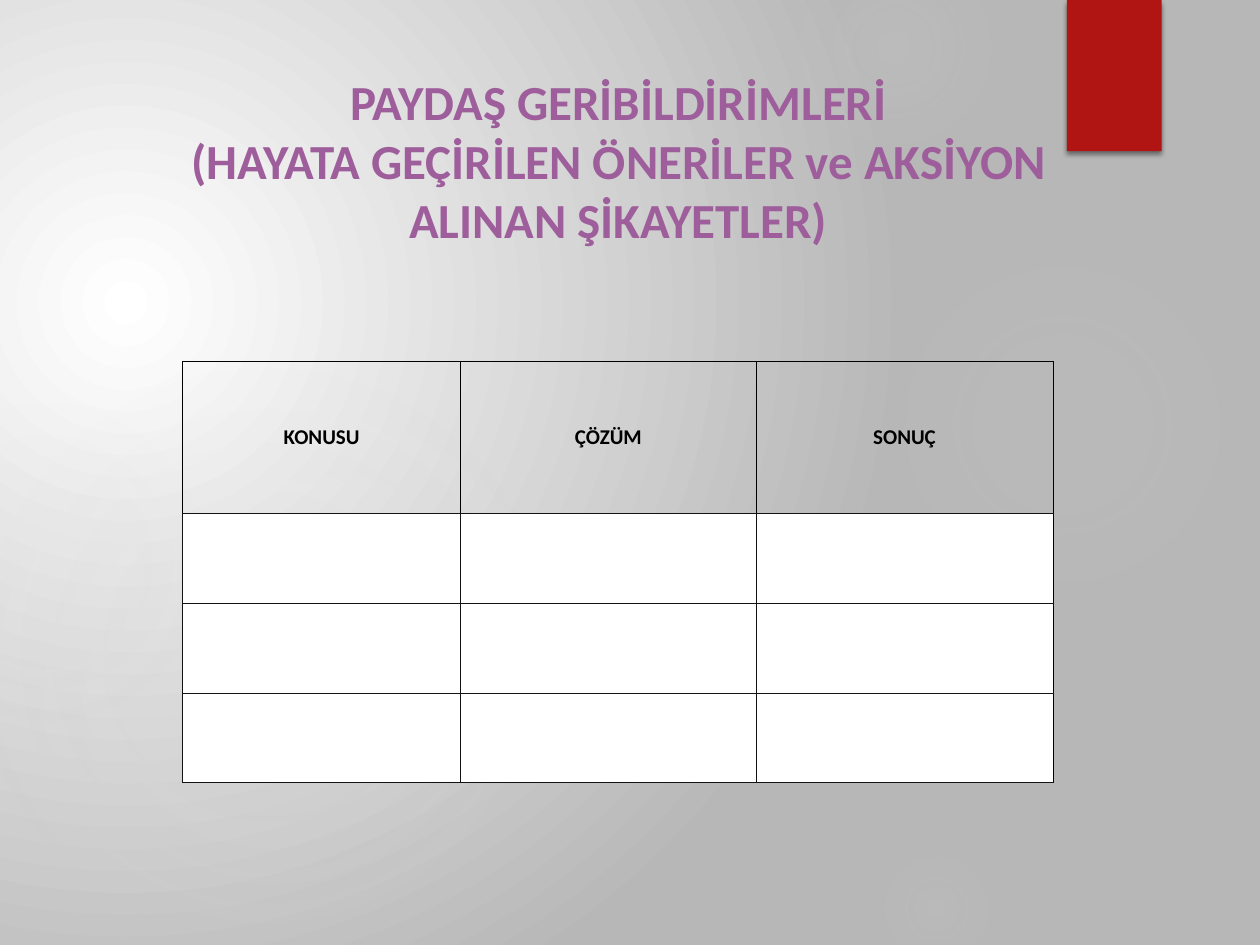
"""Build the stakeholder feedback slide with its title and table."""
from lxml import etree
from pptx import Presentation
from pptx.dml.color import RGBColor
from pptx.enum.shapes import MSO_SHAPE
from pptx.enum.text import MSO_ANCHOR, PP_ALIGN
from pptx.oxml import parse_xml
from pptx.oxml.ns import nsdecls, qn
from pptx.util import Cm, Pt

OVAL, RECT = MSO_SHAPE.OVAL, MSO_SHAPE.RECTANGLE
MID, CENTER = MSO_ANCHOR.MIDDLE, PP_ALIGN.CENTER
FONT = "Calibri"
COLORS = {"white": "FFFFFF", "gray": "B7B7B7", "glow": "D9D9D9", "red": "B01513",
          "purple": "9E5E9B", "black": "000000", "ink": "141312"}


def shade(node, stops, rect):
    """Swap the solid fill of a node for a circular gradient."""
    marks = "".join(
        f'<a:gs pos="{pos * 1000}"><a:srgbClr val="{COLORS[tone]}">'
        f'<a:alpha val="{alpha * 1000}"/></a:srgbClr></a:gs>'
        for pos, tone, alpha in stops)
    sides = " ".join(f'{side}="{val * 1000}"' for side, val in zip("ltrb", rect))
    grad = parse_xml(
        f'<a:gradFill {nsdecls("a")} rotWithShape="1"><a:gsLst>{marks}</a:gsLst>'
        f'<a:path path="circle"><a:fillToRect {sides}/></a:path></a:gradFill>')
    node.replace(node.find(qn("a:solidFill")), grad)


def write(para, text, size, color):
    """Add one centred bold run."""
    para.alignment = CENTER
    run = para.add_run()
    run.text = text
    run.font.name = FONT
    run.font.size = Pt(size)
    run.font.bold = True
    run.font.color.rgb = RGBColor.from_string(COLORS[color])


prs = Presentation()
prs.slide_width, prs.slide_height = Cm(25.4), Cm(19.05)
slide = prs.slides.add_slide(prs.slide_layouts[6])
shapes = slide.shapes

slide.background.fill.solid()
back = slide.element.find(".//" + qn("p:bgPr"))
shade(back, [(0, "white", 100), (100, "gray", 100)], (45, 65, 125, 100))

glows = [
    (17.5, 4.65, 7.82, 7, 6, 69),
    (15.8, -1.27, 4.45, 14, 7, 73),
    (17.5, 16.94, 2.74, 9, 5, 66),
    (-0.43, 7.42, 11.63, 11, 10, 75),
    (-2.34, 8.05, 6.55, 8, 8, 72),
]
for left, top, size, core, halo, edge in glows:
    glow = shapes.add_shape(OVAL, Cm(left), Cm(top), Cm(size), Cm(size))
    glow.shadow.inherit = False
    glow.line.fill.background()
    glow.fill.solid()
    stops = [(0, "glow", core), (36, "glow", halo), (edge, "glow", 0)]
    shade(glow.element.spPr, stops, (50, 50, 50, 50))

flag = shapes.add_shape(RECT, Cm(21.51), Cm(0), Cm(1.91), Cm(3.05))
flag.fill.solid()
flag.fill.fore_color.rgb = RGBColor.from_string(COLORS["red"])
flag.line.fill.background()
flag.shadow.inherit = False
flag.element.spPr.find(qn("a:effectLst")).append(parse_xml(
    f'<a:outerShdw {nsdecls("a")} blurRad="{Pt(3)}" dist="{Pt(2)}" dir="5400000">'
    f'<a:srgbClr val="{COLORS["black"]}"><a:alpha val="45000"/></a:srgbClr>'
    '</a:outerShdw>'))

title = shapes.add_textbox(Cm(2.29), Cm(1.32), Cm(20.35), Cm(3.84)).text_frame
title.word_wrap = True
write(title.paragraphs[0], "PAYDAŞ GERİBİLDİRİMLERİ", 28, "purple")
write(title.add_paragraph(),
      "(HAYATA GEÇİRİLEN ÖNERİLER ve AKSİYON ALINAN ŞİKAYETLER)", 28, "purple")

heads = ["KONUSU", "ÇÖZÜM", "SONUÇ"]
wides = [5.61, 5.95, 5.99]
highs = [3.06] + [1.81] * 3
table = shapes.add_table(len(highs), len(wides), Cm(3.68), Cm(7.29),
                         Cm(sum(wides)), Cm(sum(highs))).table
table.first_row = table.horz_banding = False
for col, wide in zip(table.columns, wides):
    col.width = Cm(wide)
for row, high in zip(table.rows, highs):
    row.height = Cm(high)

for r in range(len(highs)):
    for c, head in enumerate(heads):
        cell = table.cell(r, c)
        if r == 0:
            cell.fill.background()
            cell.vertical_anchor = MID
            cell.margin_left = cell.margin_right = 0
            cell.margin_top = cell.margin_bottom = 0
            write(cell.text_frame.paragraphs[0], head, 12, "black")
        else:
            cell.fill.solid()
            cell.fill.fore_color.rgb = RGBColor.from_string(COLORS["white"])
        first = "ink" if r else "black"
        edges = {"L": first, "R": "black", "T": first, "B": "ink"}
        props = cell._tc.get_or_add_tcPr()
        for spot, (side, tone) in enumerate(edges.items()):
            line = etree.Element(qn(f"a:ln{side}"), w=str(Pt(0.5)))
            solid = etree.SubElement(line, qn("a:solidFill"))
            etree.SubElement(solid, qn("a:srgbClr"), val=COLORS[tone])
            props.insert(spot, line)

prs.save("out.pptx")
